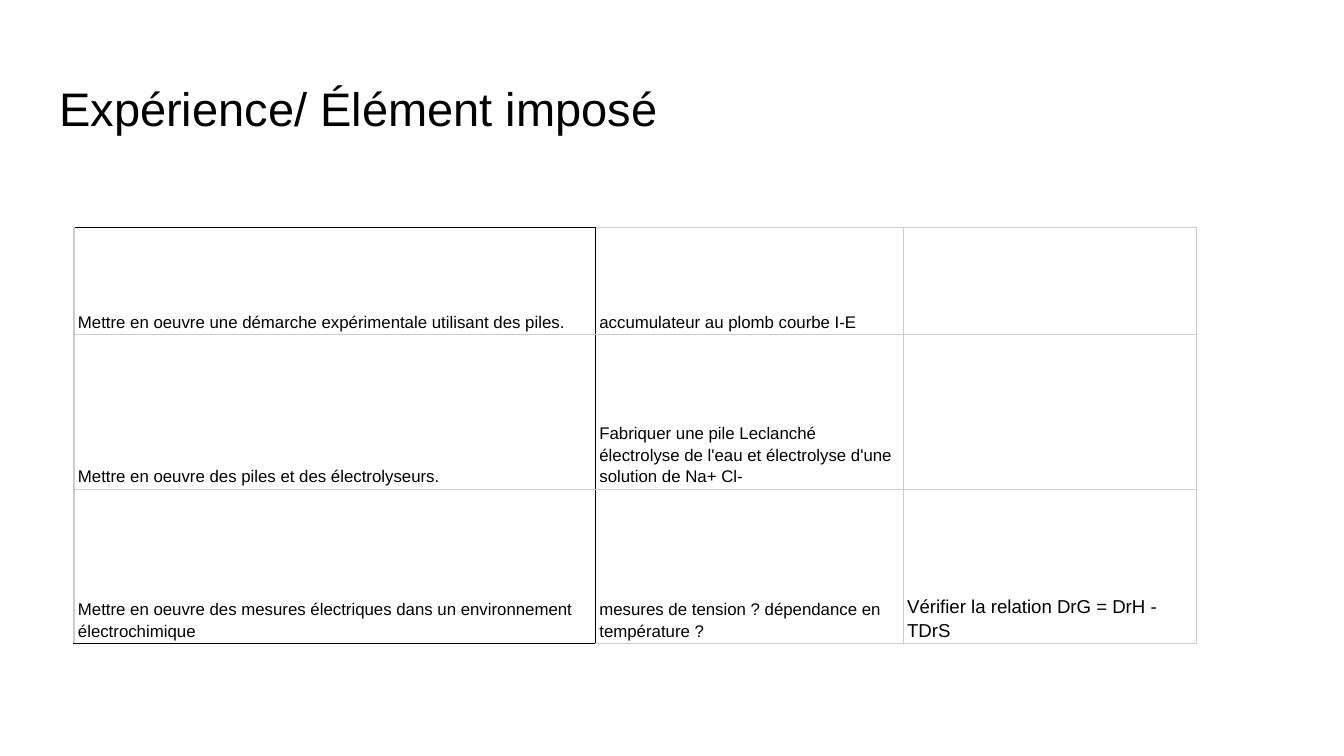
import pptx
import pptx.util
import pptx.dml.color
import pptx.enum.text
import pptx.oxml
from dataclasses import dataclass

Inches = pptx.util.Inches
Pt = pptx.util.Pt
Anchor = pptx.enum.text.MSO_ANCHOR
Align = pptx.enum.text.PP_ALIGN


@dataclass(frozen=True)
class Theme:
    """Colours, font and sizes of the slide."""
    font: str = "Arial"
    ink: str = "000000"
    paper: str = "FFFFFF"
    grid: str = "CCCCCC"
    title: float = 25.2
    body: float = 9
    note: float = 10
    rule: float = 0.75


THEME = Theme()
TITLE = "Expérience/ Élément imposé"
COLUMNS = [3.88, 2.29, 2.18]
ROW_HEIGHTS = [0.8, 1.15, 1.15]
ROWS = [
    ["Mettre en oeuvre une démarche expérimentale utilisant des piles.",
     "accumulateur au plomb courbe I-E", ""],
    ["Mettre en oeuvre des piles et des électrolyseurs.",
     "Fabriquer une pile Leclanché\n"
     "électrolyse de l'eau et électrolyse d'une solution de Na+ Cl-", ""],
    ["Mettre en oeuvre des mesures électriques dans un environnement électrochimique",
     "mesures de tension ? dépendance en température ?",
     "Vérifier la relation DrG = DrH - TDrS"],
]


def write(tf, text, size, spacing=1.0):
    """Fill a text frame with one formatted paragraph per line."""
    for i, line in enumerate(text.split("\n")):
        p = tf.add_paragraph() if i else tf.paragraphs[0]
        p.alignment = Align.LEFT
        p.line_spacing = spacing
        p.font.size = Pt(size)
        if line:
            r = p.add_run()
            r.text = line
            r.font.name = THEME.font
            r.font.size = Pt(size)
            r.font.color.rgb = pptx.dml.color.RGBColor.from_string(THEME.ink)


def set_borders(cell, colors):
    """Draw the left, right, top and bottom borders of a cell."""
    tc_pr = cell._tc.get_or_add_tcPr()
    ns = "http://schemas.openxmlformats.org/drawingml/2006/main"
    for i, (side, color) in enumerate(zip("LRTB", colors)):
        tc_pr.insert(i, pptx.oxml.parse_xml(
            f'<a:ln{side} xmlns:a="{ns}" w="{Pt(THEME.rule)}"><a:solidFill>'
            f'<a:srgbClr val="{color}"/></a:solidFill></a:ln{side}>'))


def add_title(s, text, x, y, w, h):
    """Place and format the title placeholder."""
    sp = s.shapes.title
    sp.left, sp.top, sp.width, sp.height = map(Inches, (x, y, w, h))
    tf = sp.text_frame
    tf.margin_left = tf.margin_right = tf.margin_top = tf.margin_bottom = Inches(0.1)
    tf.vertical_anchor = Anchor.TOP
    tf.word_wrap = True
    write(tf, text, THEME.title)


def add_grid(s, rows, x, y):
    """Add the table, with a black outline around its first column."""
    table = s.shapes.add_table(
        len(rows), len(COLUMNS), Inches(x), Inches(y),
        Inches(sum(COLUMNS)), Inches(sum(ROW_HEIGHTS))).table
    table.first_row = table.horz_banding = False
    for col, width in zip(table.columns, COLUMNS):
        col.width = Inches(width)
    for row, height in zip(table.rows, ROW_HEIGHTS):
        row.height = Inches(height)
    last = len(rows) - 1
    for i, row in enumerate(rows):
        for j, text in enumerate(row):
            cell = table.cell(i, j)
            cell.margin_left = cell.margin_right = Inches(0.03)
            cell.margin_top = cell.margin_bottom = Inches(0.02)
            cell.vertical_anchor = Anchor.BOTTOM
            write(cell.text_frame, text, THEME.note if j == 2 else THEME.body, spacing=1.15)
            if j == 0:
                cell.fill.solid()
                cell.fill.fore_color.rgb = pptx.dml.color.RGBColor.from_string(THEME.paper)
            else:
                cell.fill.background()
            dark = (j == 1, j == 0, j == 0 and i == 0, j == 0 and i == last)
            set_borders(cell, [THEME.ink if d else THEME.grid for d in dark])


def main():
    """Build and save the slide."""
    prs = pptx.Presentation()
    prs.slide_width = Inches(10)
    prs.slide_height = prs.slide_width * 9 // 16
    s = prs.slides.add_slide(prs.slide_layouts[5])
    add_title(s, TITLE, 0.34, 0.49, 9.32, 0.63)
    add_grid(s, ROWS, 0.55, 1.69)
    prs.save("out.pptx")


if __name__ == "__main__":
    main()
